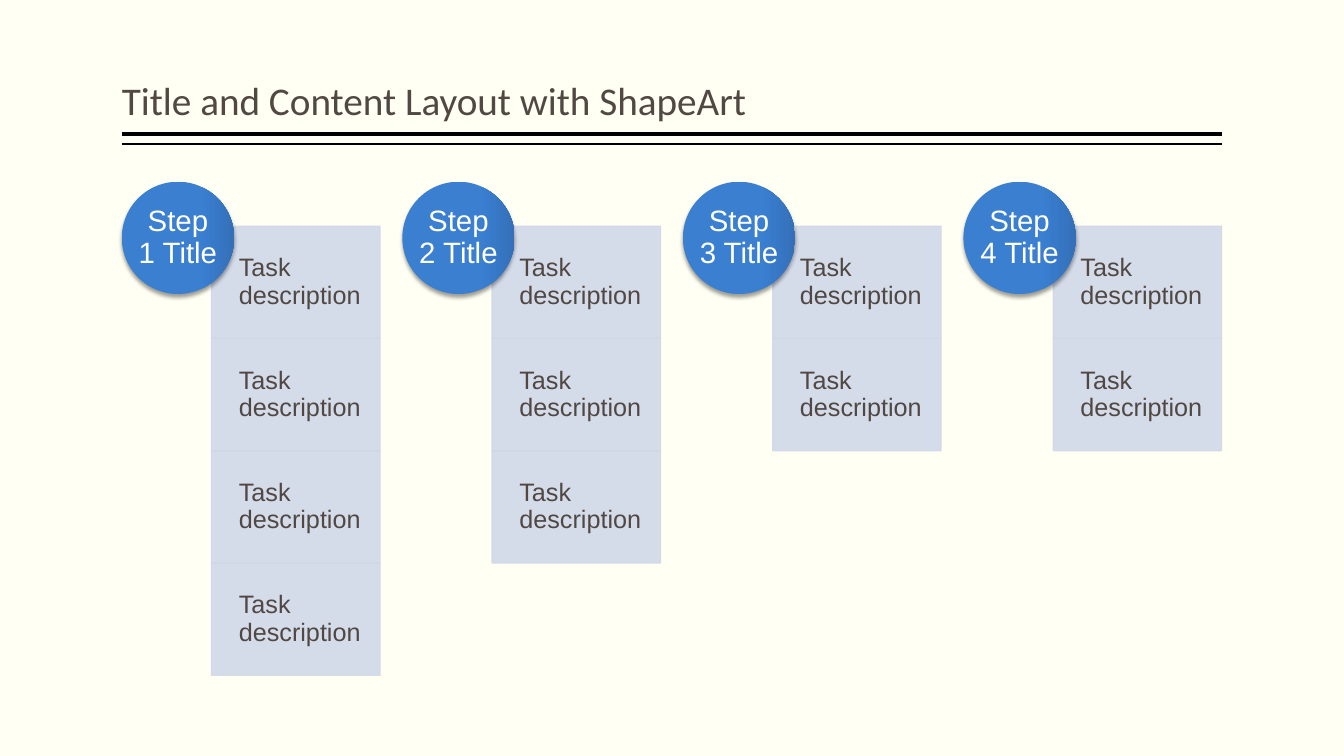
import dataclasses

import lxml.etree
import pptx
import pptx.dml.color
import pptx.enum.shapes
import pptx.enum.text
import pptx.oxml
import pptx.oxml.ns
import pptx.util
from pptx.util import Cm


@dataclasses.dataclass(frozen=True)
class Theme:
    background: str = "FFFFF3"
    ink: str = "514843"
    rule: str = "000000"
    task: str = "D0D8E8"
    step_text: str = "FFFFFF"
    step_stops: tuple[tuple[int, str], ...] = (
        (0, "3B7FD1"), (71, "3A7ED0"), (100, "3470B9"))
    title_font: str = "Calibri"
    body_font: str = "Arial"
    title_size: float = 28
    step_size: float = 21
    task_size: float = 18


@dataclasses.dataclass(frozen=True)
class Step:
    title: str
    task_count: int


@dataclasses.dataclass(frozen=True)
class Rule:
    top: float
    weight: float


THEME = Theme()
TASK_TEXT = "Task description"
STEPS = [Step("Step 1 Title", 4), Step("Step 2 Title", 3),
         Step("Step 3 Title", 2), Step("Step 4 Title", 2)]
RULES = [Rule(3.38, 3), Rule(3.63, 1)]

# Lengths in centimetres
LEFT, CONTENT_WIDTH = 3.07, 27.73
STEP_PITCH, STEP_TOP, CELL = 7.07, 4.58, 2.83
TASK_OFFSET, TASK_TOP, TASK_WIDTH = 2.26, 5.7, 4.25

DRAWING = pptx.oxml.ns.nsdecls("a")
SHADOW = (f'<a:effectLst {DRAWING}><a:outerShdw blurRad="39370" dist="25400" '
          'dir="5400000" rotWithShape="0"><a:srgbClr val="000000">'
          '<a:alpha val="38000"/></a:srgbClr></a:outerShdw></a:effectLst>')


def color(value: str) -> pptx.dml.color.RGBColor:
    return pptx.dml.color.RGBColor.from_string(value)


def write(shape, text: str, font: str, size: float, ink: str,
          insets: tuple[float, float, float, float],
          anchor=pptx.enum.text.MSO_ANCHOR.MIDDLE,
          align=pptx.enum.text.PP_ALIGN.LEFT, space_after: float = 0) -> None:
    """Set the text of a shape; insets are left, top, right, bottom in cm."""
    frame = shape.text_frame
    frame.text = text
    frame.word_wrap = True
    frame.auto_size = pptx.enum.text.MSO_AUTO_SIZE.NONE
    frame.vertical_anchor = anchor
    (frame.margin_left, frame.margin_top,
     frame.margin_right, frame.margin_bottom) = map(Cm, insets)
    para = frame.paragraphs[0]
    para.alignment = align
    para.line_spacing = 0.9
    para.space_after = pptx.util.Pt(space_after)
    span = para.runs[0]
    span.font.name = font
    span.font.size = pptx.util.Pt(size)
    span.font.color.rgb = color(ink)


def set_alpha(fill_element, percent: int) -> None:
    for rgb in fill_element.iter(pptx.oxml.ns.qn("a:srgbClr")):
        alpha = lxml.etree.SubElement(rgb, pptx.oxml.ns.qn("a:alpha"))
        alpha.set("val", str(percent * 1000))


def add_title(page, text: str) -> None:
    title = page.shapes.title
    title.left, title.top = Cm(LEFT), Cm(0.2)
    title.width, title.height = Cm(CONTENT_WIDTH), Cm(3.05)
    write(title, text, THEME.title_font, THEME.title_size, THEME.ink,
          (0, 0.13, 0, 0.13), anchor=pptx.enum.text.MSO_ANCHOR.BOTTOM)


def add_rule(page, rule: Rule) -> None:
    line = page.shapes.add_connector(
        pptx.enum.shapes.MSO_CONNECTOR.STRAIGHT, Cm(LEFT), Cm(rule.top),
        Cm(LEFT + CONTENT_WIDTH), Cm(rule.top))
    line.line.color.rgb = color(THEME.rule)
    line.line.width = pptx.util.Pt(rule.weight)
    lxml.etree.SubElement(line._element.spPr, pptx.oxml.ns.qn("a:effectLst"))


def add_task(page, left: float, top: float) -> None:
    box = page.shapes.add_shape(
        pptx.enum.shapes.MSO_SHAPE.RECTANGLE,
        Cm(left), Cm(top), Cm(TASK_WIDTH), Cm(CELL))
    box.shadow.inherit = False
    box.fill.solid()
    box.fill.fore_color.rgb = color(THEME.task)
    box.line.color.rgb = color(THEME.task)
    box.line.width = pptx.util.Pt(0.75)
    set_alpha(box._element.spPr, 90)
    write(box, TASK_TEXT, THEME.body_font, THEME.task_size, THEME.ink,
          (0.69, 0.36, 0.36, 0.36), space_after=6.3)


def add_badge(page, text: str, left: float) -> None:
    """Add the shaded circle that carries the title of a step."""
    badge = page.shapes.add_shape(
        pptx.enum.shapes.MSO_SHAPE.OVAL,
        Cm(left), Cm(STEP_TOP), Cm(CELL), Cm(CELL))
    badge.line.fill.background()
    badge.fill.gradient()
    badge.fill.gradient_angle = 0
    properties = badge._element.spPr
    stops = properties.find(".//" + pptx.oxml.ns.qn("a:gsLst"))
    for stop in list(stops):
        stops.remove(stop)
    for position, value in THEME.step_stops:
        stops.append(pptx.oxml.parse_xml(
            f'<a:gs {DRAWING} pos="{position * 1000}">'
            f'<a:srgbClr val="{value}"/></a:gs>'))
    properties.append(pptx.oxml.parse_xml(SHADOW))
    write(badge, text, THEME.body_font, THEME.step_size, THEME.step_text,
          (0, 0, 0, 0), align=pptx.enum.text.PP_ALIGN.CENTER, space_after=7.3)


def add_step(page, step: Step, left: float) -> None:
    for row in range(step.task_count):
        add_task(page, left + TASK_OFFSET, TASK_TOP + row * CELL)
    add_badge(page, step.title, left)


def main() -> None:
    deck = pptx.Presentation()
    deck.slide_width, deck.slide_height = Cm(33.87), Cm(19.05)
    page = deck.slides.add_slide(deck.slide_layouts.get_by_name("Title Only"))
    page.background.fill.solid()
    page.background.fill.fore_color.rgb = color(THEME.background)
    add_title(page, "Title and Content Layout with ShapeArt")
    for rule in RULES:
        add_rule(page, rule)
    for column, step in enumerate(STEPS):
        add_step(page, step, LEFT + column * STEP_PITCH)
    deck.save("out.pptx")


if __name__ == "__main__":
    main()
